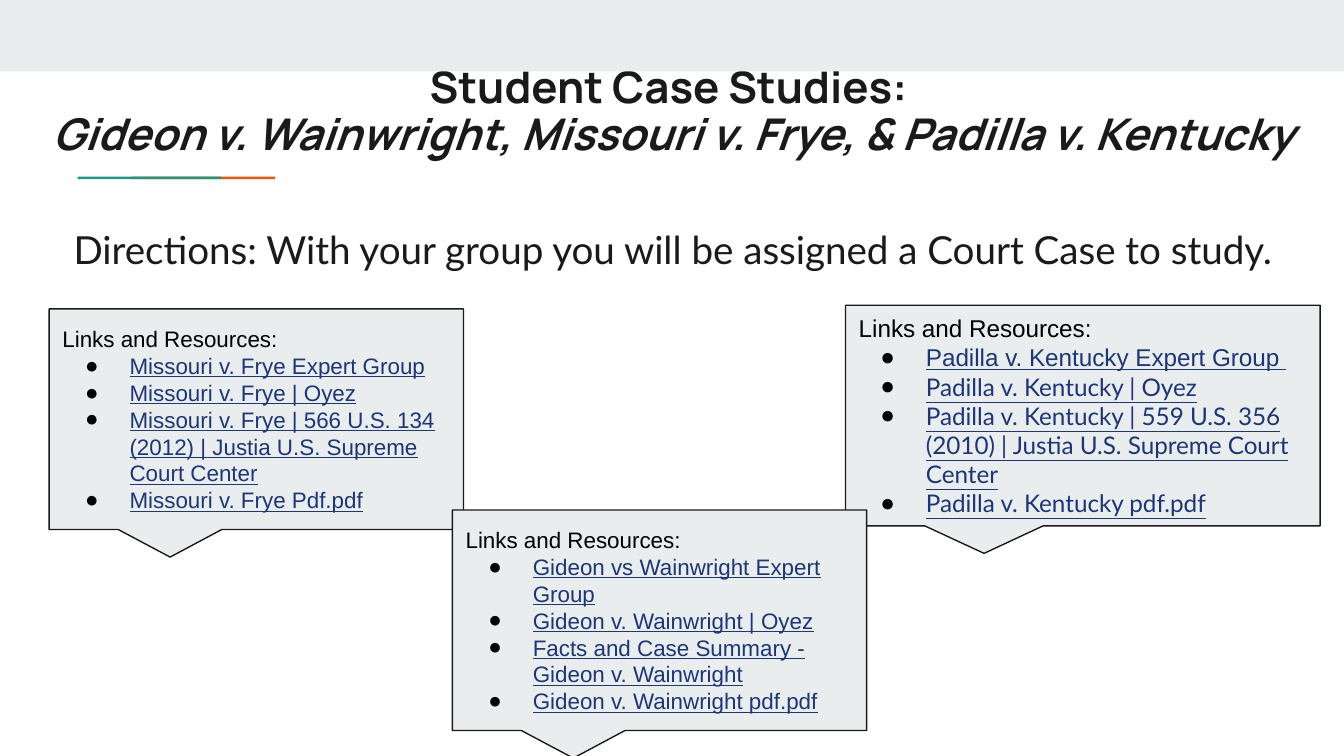
from dataclasses import dataclass

from lxml import etree
from pptx import Presentation
from pptx.dml.color import RGBColor
from pptx.enum.shapes import MSO_SHAPE
from pptx.enum.text import MSO_ANCHOR, MSO_AUTO_SIZE, PP_ALIGN
from pptx.oxml.ns import qn
from pptx.util import Cm, Pt

RECT = MSO_SHAPE.RECTANGLE
CALLOUT = MSO_SHAPE.ROUNDED_RECTANGULAR_CALLOUT
TOP, MIDDLE = MSO_ANCHOR.TOP, MSO_ANCHOR.MIDDLE
LEFT, CENTER = PP_ALIGN.LEFT, PP_ALIGN.CENTER
NO_AUTOFIT = MSO_AUTO_SIZE.NONE

INK, BLACK, LINK = "1A1A1A", "000000", "1C3678"
PALE, TEAL, ORANGE = "E9EDEE", "1A9988", "EB5600"
INSET = 0.25
LINE_HEIGHT = 1.2


@dataclass
class Resource:
    text: str
    font: str = "Arial"


@dataclass
class CaseBox:
    """A callout with a heading and linked resources; lengths in cm."""
    left: float
    top: float
    width: float
    size: float
    hanging: float
    resources: list[Resource]
    height: float = 4.17


CASES = [
    CaseBox(15.98, 5.77, 8.97, 13, 0.86, [
        Resource("Padilla v. Kentucky Expert Group "),
        Resource("Padilla v. Kentucky | Oyez", "Lato"),
        Resource("Padilla v. Kentucky | 559 U.S. 356 (2010) | Justia U.S. Supreme Court Center", "Lato"),
        Resource("Padilla v. Kentucky pdf.pdf", "Lato"),
    ]),
    CaseBox(0.93, 5.84, 7.83, 12, 0.84, [
        Resource("Missouri v. Frye Expert Group"),
        Resource("Missouri v. Frye | Oyez"),
        Resource("Missouri v. Frye | 566 U.S. 134 (2012) | Justia U.S. Supreme Court Center"),
        Resource("Missouri v. Frye Pdf.pdf"),
    ]),
    CaseBox(8.55, 9.64, 7.83, 12, 0.84, [
        Resource("Gideon vs Wainwright Expert Group"),
        Resource("Gideon v. Wainwright | Oyez"),
        Resource("Facts and Case Summary - Gideon v. Wainwright"),
        Resource("Gideon v. Wainwright pdf.pdf"),
    ]),
]


def rgb(color: str) -> RGBColor:
    return RGBColor.from_string(color)


def add_shape(s, kind, left: float, top: float, width: float, height: float, fill: str):
    sp = s.shapes.add_shape(kind, Cm(left), Cm(top), Cm(width), Cm(height))
    sp.shadow.inherit = False
    sp.fill.solid()
    sp.fill.fore_color.rgb = rgb(fill)
    sp.line.fill.background()
    return sp


def place(sp, left: float, top: float, width: float, height: float) -> None:
    sp.left, sp.top, sp.width, sp.height = Cm(left), Cm(top), Cm(width), Cm(height)


def set_frame(tf, anchor) -> None:
    tf.word_wrap = True
    tf.auto_size = NO_AUTOFIT
    tf.vertical_anchor = anchor
    tf.margin_left = tf.margin_right = tf.margin_top = tf.margin_bottom = Cm(INSET)


def format_paragraph(p, font: str, size: float, color: str, align, spacing) -> None:
    p.alignment = align
    p.line_spacing = spacing
    p.space_before = Pt(0)
    for r in p.runs:
        r.font.name = font
        r.font.size = Pt(size)
        r.font.color.rgb = rgb(color)


def set_bullet(p, hanging: float) -> None:
    pPr = p._p.get_or_add_pPr()
    pPr.set("marL", str(Cm(1.27)))
    pPr.set("indent", str(-Cm(hanging)))
    color = etree.SubElement(pPr, qn("a:buClr"))
    etree.SubElement(color, qn("a:srgbClr"), val=BLACK)
    etree.SubElement(pPr, qn("a:buFont"), typeface="Arial")
    etree.SubElement(pPr, qn("a:buChar"), char="●")


def add_title(s) -> None:
    sp = s.shapes.title
    place(sp, 0.46, 0.99, 24.51, 1.83)
    tf = sp.text_frame
    tf.text = ("Student Case Studies: \n"
               "Gideon v. Wainwright, Missouri v. Frye, & Padilla v. Kentucky")
    set_frame(tf, TOP)
    for p in tf.paragraphs:
        format_paragraph(p, "Manrope", 23.4, INK, CENTER, 0.9)
        p.runs[0].font.bold = True
    tf.paragraphs[1].runs[0].font.italic = True


def add_directions(s) -> None:
    sp = s.placeholders[1]
    place(sp, 1.14, 4.09, 23.83, 1.7)
    tf = sp.text_frame
    tf.text = "Directions: With your group you will be assigned a Court Case to study."
    set_frame(tf, TOP)
    p = tf.paragraphs[0]
    pPr = p._p.get_or_add_pPr()
    pPr.set("marL", "0")
    pPr.set("indent", "0")
    etree.SubElement(pPr, qn("a:buNone"))
    format_paragraph(p, "Lato", 20.7, INK, LEFT, 0.95)
    p.space_after = Pt(12)


def add_case_box(s, case: CaseBox) -> None:
    sp = add_shape(s, CALLOUT, case.left, case.top, case.width, case.height, PALE)
    for i, value in enumerate((-0.208, 0.625, 0)):
        sp.adjustments[i] = value
    sp.line.color.rgb = rgb(INK)
    sp.line.width = Pt(0.75)
    tf = sp.text_frame
    set_frame(tf, MIDDLE)
    spacing = Pt(case.size * LINE_HEIGHT)
    tf.text = "Links and Resources:"
    format_paragraph(tf.paragraphs[0], "Arial", case.size, BLACK, LEFT, spacing)
    for resource in case.resources:
        p = tf.add_paragraph()
        p.text = resource.text
        set_bullet(p, case.hanging)
        format_paragraph(p, resource.font, case.size, LINK, LEFT, spacing)
        p.runs[0].font.underline = True


def main() -> None:
    prs = Presentation()
    prs.slide_width, prs.slide_height = Cm(25.4), Cm(14.29)
    s = prs.slides.add_slide(prs.slide_layouts[1])
    add_title(s)
    add_directions(s)
    add_shape(s, RECT, 0, 0, 25.4, 1.35, PALE)
    for left, color in ((2.49, ORANGE), (1.47, TEAL)):
        add_shape(s, RECT, left, 3.34, 2.71, 0.05, color)
    for case in CASES:
        add_case_box(s, case)
    prs.save("out.pptx")


if __name__ == "__main__":
    main()
